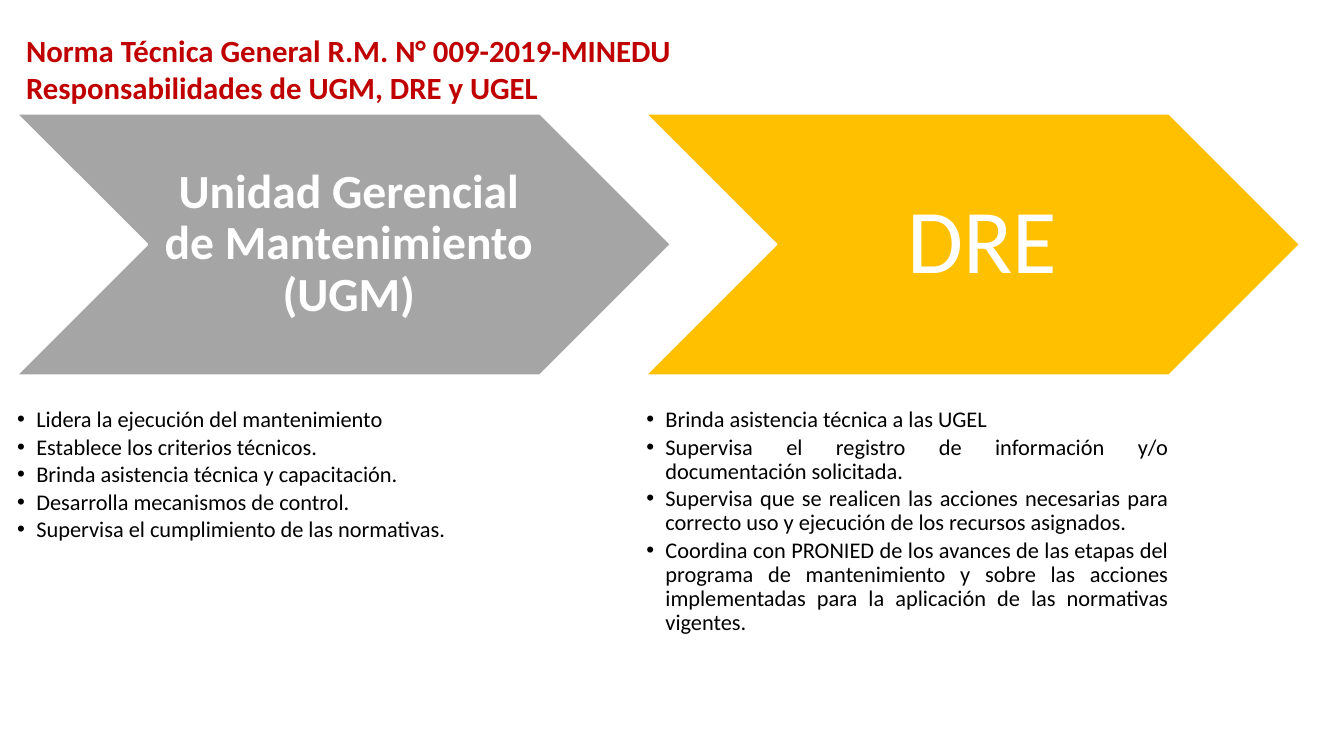
"""Build the slide on the responsibilities of UGM, DRE and UGEL."""
from lxml.etree import SubElement
from pptx import Presentation
from pptx.dml.color import RGBColor
from pptx.enum.shapes import MSO_SHAPE
from pptx.enum.text import MSO_ANCHOR, PP_ALIGN
from pptx.oxml.ns import qn
from pptx.util import Inches, Pt


def rgb(value):
    return RGBColor.from_string(value)


def add_text(box, lines, insets, color, font, para, anchor=MSO_ANCHOR.TOP, bullet=False):
    tf = s.shapes.add_textbox(*map(Inches, box)).text_frame
    tf.word_wrap = True
    tf.vertical_anchor = anchor
    for side, inset in zip(("left", "top", "right", "bottom"), insets):
        setattr(tf, f"margin_{side}", Inches(inset))
    for i, line in enumerate(lines):
        p = tf.paragraphs[0] if i == 0 else tf.add_paragraph()
        for name, value in para.items():
            setattr(p, name, value)
        if bullet:
            pPr = p._p.get_or_add_pPr()
            pPr.set("marL", str(Inches(0.19)))
            pPr.set("indent", str(Inches(-0.19)))
            SubElement(pPr, qn("a:buFont"), typeface="Arial")
            SubElement(pPr, qn("a:buChar"), char="•")
        r = p.add_run()
        r.text = line
        for name, value in font.items():
            setattr(r.font, name, value)
        r.font.name = "Calibri"
        r.font.color.rgb = rgb(color)


prs = Presentation()
prs.slide_width, prs.slide_height = Inches(13.33), Inches(7.5)
s = prs.slides.add_slide(prs.slide_layouts[6])

add_text(
    (0.16, 0.27, 6.78, 0.84),
    ["Norma Técnica General R.M. N° 009-2019-MINEDU", "Responsabilidades de UGM, DRE y UGEL"],
    (0.1, 0.05, 0.1, 0.05), "C00000", {"size": Pt(22), "bold": True}, {},
)

columns = [
    ("Unidad Gerencial de Mantenimiento (UGM)", "A5A5A5", {"size": Pt(34), "bold": True},
     (0.15, 0.05, 0.05, 0.05), [
        "Lidera la ejecución del mantenimiento",
        "Establece los criterios técnicos.",
        "Brinda asistencia técnica y capacitación.",
        "Desarrolla mecanismos de control.",
        "Supervisa el cumplimiento de las normativas.",
    ]),
    ("DRE", "FFC000", {"size": Pt(65)}, (0.28, 0.09, 0.09, 0.09), [
        "Brinda asistencia técnica a las UGEL",
        "Supervisa el registro de información y/o documentación solicitada.",
        "Supervisa que se realicen las acciones necesarias para correcto uso y ejecución "
        "de los recursos asignados.",
        "Coordina con PRONIED de los avances de las etapas del programa de mantenimiento y "
        "sobre las acciones implementadas para la aplicación de las normativas vigentes.",
    ]),
]

top, width, height = 1.13, 6.48, 2.59
for i, (heading, fill, font, insets, duties) in enumerate(columns):
    left = 0.17 + 6.24 * i
    sp = s.shapes.add_shape(MSO_SHAPE.CHEVRON, *map(Inches, (left, top, width, height)))
    sp.shadow.inherit = False
    sp.fill.solid()
    sp.fill.fore_color.rgb = rgb(fill)
    sp.line.color.rgb = rgb("FFFFFF")
    sp.line.width = Pt(1)
    add_text(
        (left + height / 2, top, width - height, height), [heading], insets, "FFFFFF", font,
        {"alignment": PP_ALIGN.CENTER, "line_spacing": 0.9}, MSO_ANCHOR.MIDDLE,
    )
    add_text(
        (left, 4.05, 5.18, 2.33), duties, (0, 0, 0, 0), "000000", {"size": Pt(16)},
        {"alignment": PP_ALIGN.JUSTIFY, "line_spacing": 0.9, "space_after": Pt(2.4)}, bullet=True,
    )

prs.save("out.pptx")
